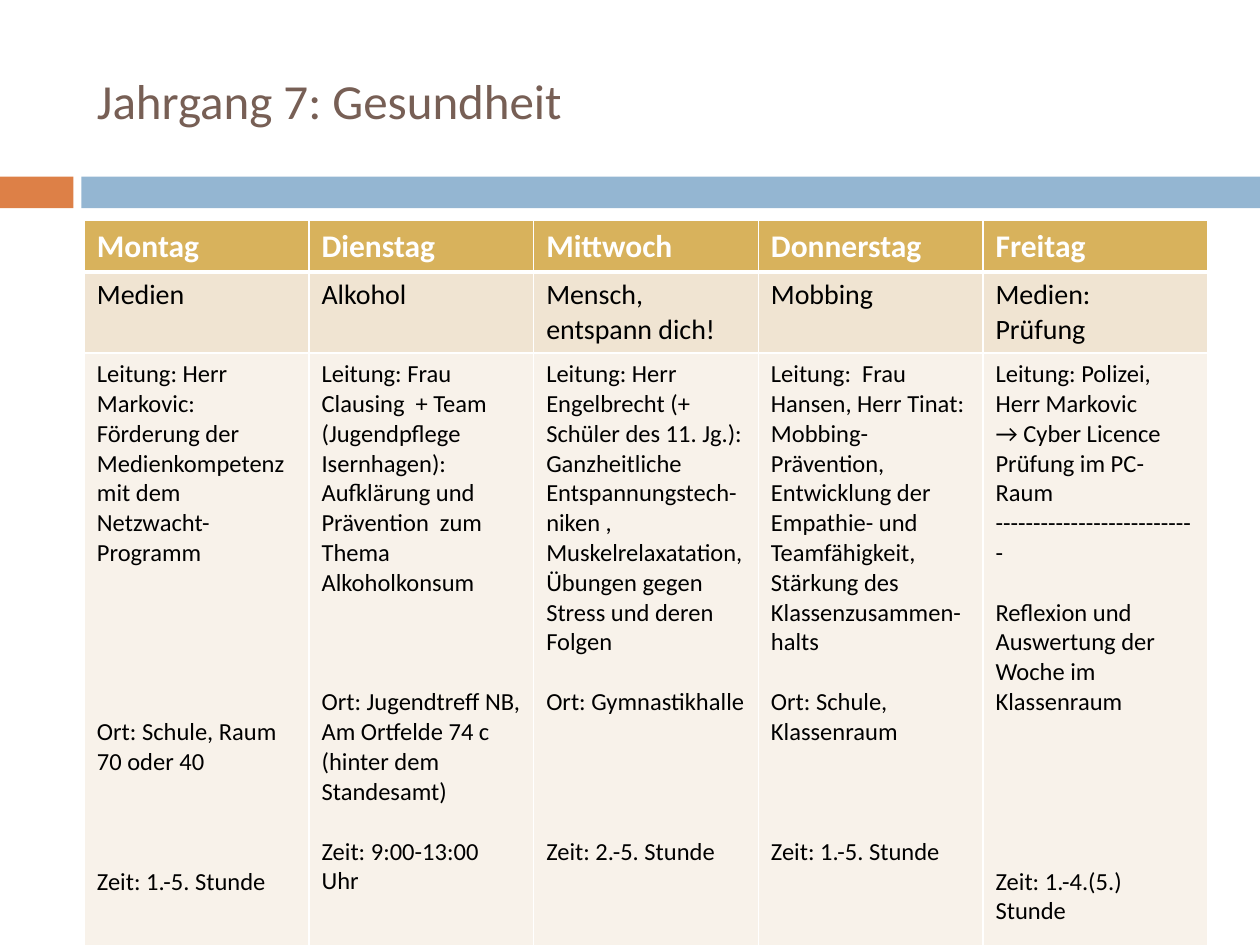
from lxml import etree
from pptx import Presentation
from pptx import util as u
from pptx.dml.color import RGBColor
from pptx.enum import shapes, text
from pptx.oxml import ns

LINE = 17.1  # height in points of one line of 14 pt body text
BODY_SIZE = 14
WHITE = "FFFFFF"

HEADER = dict(size=18, bold=True, colour=WHITE, fill="D8B25C")
TOPIC = dict(size=16, bold=False, colour="000000", fill="F0E4D2")
DETAILS = dict(size=BODY_SIZE, bold=False, colour="000000", fill="F8F2EA")

# Each day: name, topic, and detail paragraphs as (free lines above, wording)
DAYS = [
    ("Montag", "Medien", [
        (0, "Leitung: Herr Markovic:"),
        (0, "Förderung der Medienkompetenz mit dem Netzwacht-Programm"),
        (5, "Ort: Schule, Raum 70 oder 40"),
        (3, "Zeit: 1.-5. Stunde")]),
    ("Dienstag", "Alkohol", [
        (0, "Leitung: Frau Clausing  + Team (Jugendpflege Isernhagen):"),
        (0, "Aufklärung und Prävention  zum Thema Alkoholkonsum"),
        (3, "Ort: Jugendtreff NB, Am Ortfelde 74 c (hinter dem Standesamt)"),
        (1, "Zeit: 9:00-13:00 Uhr")]),
    ("Mittwoch", "Mensch, entspann dich!", [
        (0, "Leitung: Herr Engelbrecht (+ Schüler des 11. Jg.):"),
        (0, "Ganzheitliche Entspannungstech-niken , Muskelrelaxatation,"),
        (0, "Übungen gegen Stress und deren Folgen"),
        (1, "Ort: Gymnastikhalle"),
        (4, "Zeit: 2.-5. Stunde")]),
    ("Donnerstag", "Mobbing", [
        (0, "Leitung:  Frau Hansen, Herr Tinat:"),
        (0, "Mobbing-Prävention, Entwicklung der Empathie- und Teamfähigkeit,"),
        (0, "Stärkung des Klassenzusammen-halts"),
        (1, "Ort: Schule, Klassenraum"),
        (3, "Zeit: 1.-5. Stunde")]),
    ("Freitag", "Medien: \vPrüfung", [
        (0, "Leitung: Polizei, Herr Markovic"),
        (0, "→ Cyber Licence Prüfung im PC-Raum"),
        (0, "-" * 27),
        (1, "Reflexion und Auswertung der Woche im Klassenraum"),
        (5, "Zeit: 1.-4.(5.) Stunde")]),
]


def rgb(colour):
    return RGBColor.from_string(colour)


def apply(target, values):
    for name, value in values.items():
        setattr(target, name, value)


def write(para, wording, size, colour, bold=False):
    para.text = wording
    for span in para.runs:
        apply(span.font, dict(name="Calibri", size=u.Pt(size), bold=bold))
        span.font.color.rgb = rgb(colour)


def add_title(page, left, top, width, height):
    title = page.shapes.title
    apply(title, dict(left=left, top=top, width=width, height=height))
    apply(title.text_frame, dict(vertical_anchor=text.MSO_ANCHOR.MIDDLE,
                                 auto_size=text.MSO_AUTO_SIZE.NONE,
                                 word_wrap=True))
    para = title.text_frame.paragraphs[0]
    write(para, "Jahrgang 7: Gesundheit", 28, "775F55")
    para.alignment = text.PP_ALIGN.LEFT


def add_band(page, left, top, width, height):
    """Short orange block, a gap, then a blue bar filling the rest."""
    block, gap = u.Cm(1.48), u.Cm(0.16)
    start = block + gap
    for x, length, colour in ((left, block, "DD8047"),
                              (left + start, width - start, "94B6D2")):
        bar = page.shapes.add_shape(shapes.MSO_SHAPE.RECTANGLE,
                                    x, top, length, height)
        bar.fill.solid()
        bar.fill.fore_color.rgb = rgb(colour)
        bar.line.fill.background()
        bar.shadow.inherit = False


def set_borders(cell, top, bottom):
    """White borders; top and bottom widths in points, sides 1 pt."""
    properties = cell._tc.get_or_add_tcPr()
    for side, points in (("L", 1), ("R", 1), ("T", top), ("B", bottom)):
        line = etree.SubElement(properties, ns.qn("a:ln" + side),
                                w=str(u.Pt(points)))
        fill = etree.SubElement(line, ns.qn("a:solidFill"))
        etree.SubElement(fill, ns.qn("a:srgbClr"), val=WHITE)


def fill_cell(cell, paragraphs, style, top=1, bottom=1):
    set_borders(cell, top, bottom)
    cell.fill.solid()
    cell.fill.fore_color.rgb = rgb(style["fill"])
    frame = cell.text_frame
    for index, (free_lines, wording) in enumerate(paragraphs):
        para = frame.add_paragraph() if index else frame.paragraphs[0]
        write(para, wording, style["size"], style["colour"], style["bold"])
        para.space_before = u.Pt(round(free_lines * LINE, 1))


def add_week_table(page, left, top, width, row_heights):
    frame = page.shapes.add_table(len(row_heights), len(DAYS), left, top,
                                  width, sum(row_heights))
    table = frame.table
    for row, height in zip(table.rows, row_heights):
        row.height = height
    for index, (day, topic, details) in enumerate(DAYS):
        table.columns[index].width = width // len(DAYS)
        fill_cell(table.cell(0, index), [(0, day)], HEADER, bottom=3)
        fill_cell(table.cell(1, index), [(0, topic)], TOPIC, top=3)
        fill_cell(table.cell(2, index), details, DETAILS)


def main():
    deck = Presentation()
    deck.slide_width, deck.slide_height = u.Cm(25.4), u.Cm(19.05)
    page = deck.slides.add_slide(deck.slide_layouts.get_by_name("Title Only"))
    left, width = u.Cm(1.7), u.Cm(22.65)
    add_band(page, 0, u.Cm(3.56), deck.slide_width, u.Cm(0.64))
    add_title(page, left, u.Cm(0.64), width, u.Cm(2.74))
    add_week_table(page, left, u.Cm(4.45), width,
                   [u.Cm(1.03), u.Cm(1.62), u.Cm(12.3)])
    deck.save("out.pptx")


if __name__ == "__main__":
    main()
